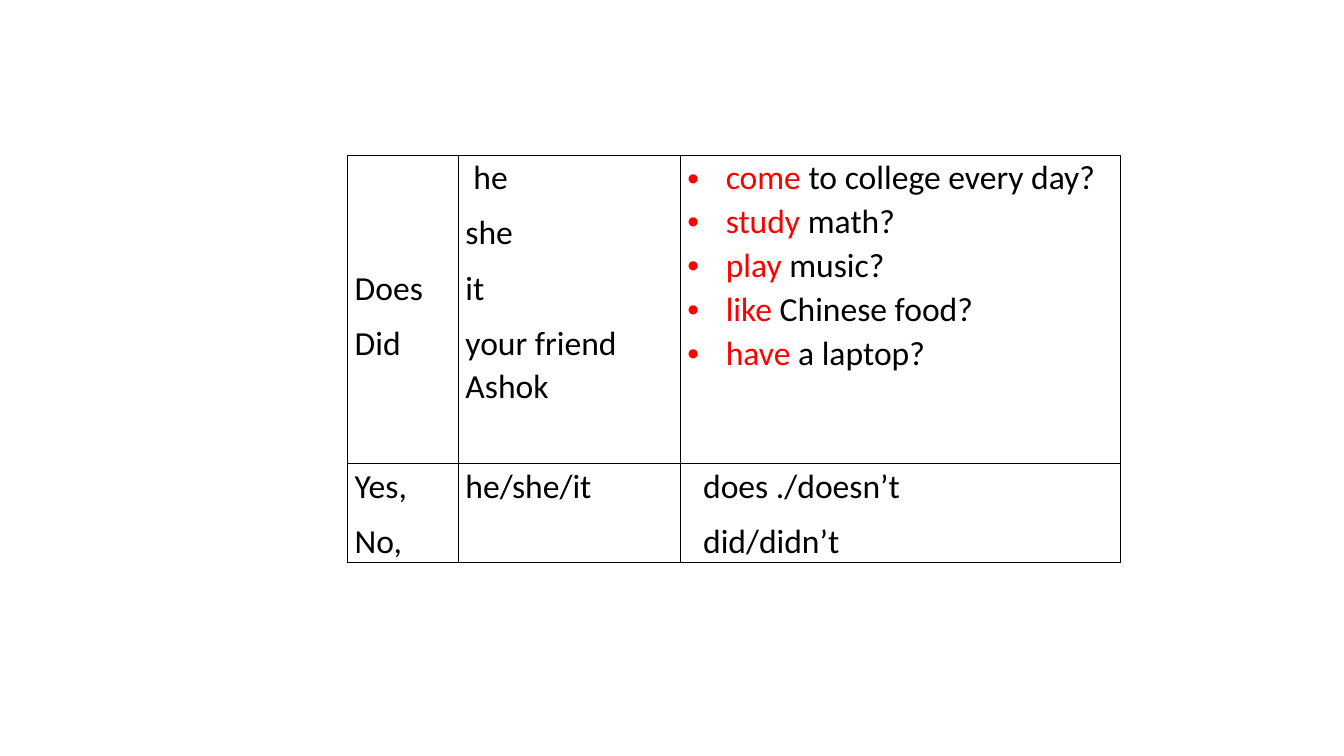
from dataclasses import dataclass

from lxml.etree import SubElement
from pptx import Presentation
from pptx.dml.color import RGBColor
from pptx.oxml.ns import qn
from pptx.util import Cm, Pt


@dataclass(frozen=True)
class Theme:
    font: str = "Calibri"
    size: int = 24
    text: str = "000000"
    accent: str = "FF0000"
    border: str = "000000"
    border_pt: float = 1
    line_spacing: float = 1.07
    space_after: int = 8
    cell_margin: float = 0.18
    bullet_indent: float = 0.97


class Deck:
    def __init__(self, prs, theme):
        self.theme = theme
        self.s = prs.slides.add_slide(prs.slide_layouts[6])

    def table(self, left, top, cols, rows):
        shape = self.s.shapes.add_table(len(rows), len(cols), Cm(left), Cm(top),
                                        Cm(sum(cols)), Cm(sum(rows)))
        tbl = shape.table
        tbl.first_row = tbl.horz_banding = False
        for col, width in zip(tbl.columns, cols):
            col.width = Cm(width)
        for row, height in zip(tbl.rows, rows):
            row.height = Cm(height)
        for cell in tbl.iter_cells():
            self.frame_cell(cell)
        return tbl

    def frame_cell(self, cell):
        t = self.theme
        cell.margin_left = cell.margin_right = Cm(t.cell_margin)
        cell.margin_top = cell.margin_bottom = 0
        tcPr = cell._tc.get_or_add_tcPr()
        for side in ("a:lnL", "a:lnR", "a:lnT", "a:lnB"):
            ln = SubElement(tcPr, qn(side), w=str(Pt(t.border_pt)))
            fill = SubElement(ln, qn("a:solidFill"))
            SubElement(fill, qn("a:srgbClr"), val=t.border)
        cell.fill.background()

    def paragraph(self, tf, first, runs, after, indent=0):
        p = tf.paragraphs[0] if first else tf.add_paragraph()
        p.line_spacing = self.theme.line_spacing
        p.space_after = Pt(after)
        if indent:
            p._p.get_or_add_pPr().set("marL", str(Cm(indent)))
        for text, color in runs:
            r = p.add_run()
            r.text = text
            r.font.name = self.theme.font
            r.font.size = Pt(self.theme.size)
            r.font.color.rgb = RGBColor.from_string(color)
        return p

    def lines(self, cell, texts, indents=()):
        for i, text in enumerate(texts):
            indent = indents[i] if i < len(indents) else 0
            self.paragraph(cell.text_frame, i == 0, [(text, self.theme.text)],
                           self.theme.space_after, indent)

    def bullets(self, cell, items):
        t = self.theme
        for i, (verb, rest) in enumerate(items):
            after = t.space_after if i == len(items) - 1 else 0
            p = self.paragraph(cell.text_frame, i == 0,
                               [(verb, t.accent), (rest, t.text)],
                               after, t.bullet_indent)
            pPr = p._p.get_or_add_pPr()
            pPr.set("indent", str(-Cm(t.bullet_indent)))
            SubElement(pPr, qn("a:buFont"), typeface="Arial")
            SubElement(pPr, qn("a:buChar"), char="•")


def main():
    prs = Presentation()
    prs.slide_width, prs.slide_height = Cm(33.87), Cm(19.05)
    deck = Deck(prs, Theme())

    # Grid: auxiliary, subject, verb phrase
    tbl = deck.table(8.76, 3.91, cols=(2.79, 5.59, 11.1), rows=(7.77, 2.49))

    # Questions
    auxiliary = tbl.cell(0, 0)
    auxiliary.margin_top = Cm(2.78)
    deck.lines(auxiliary, ["Does", "Did"])
    deck.lines(tbl.cell(0, 1), ["he", "she", "it", "your friend Ashok"], [0.2])
    deck.bullets(tbl.cell(0, 2), [
        ("come ", "to college every day?"),
        ("study", " math?"),
        ("play", " music?"),
        ("like ", "Chinese food?"),
        ("have", " a laptop?"),
    ])

    # Short answers
    deck.lines(tbl.cell(1, 0), ["Yes,", "No,"])
    deck.lines(tbl.cell(1, 1), ["he/she/it"])
    deck.lines(tbl.cell(1, 2), ["does ./doesn’t", "did/didn’t"], [0.4, 0.4])

    prs.save("out.pptx")


if __name__ == "__main__":
    main()
